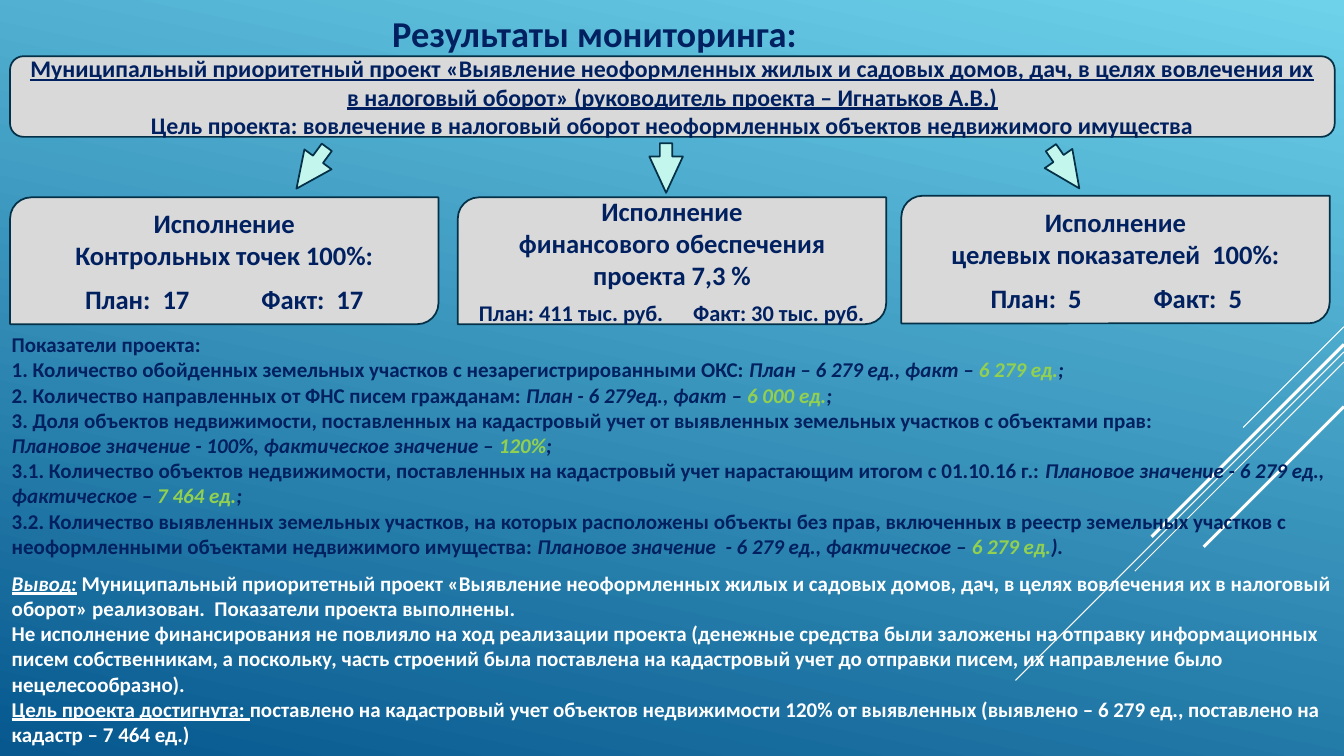
from dataclasses import dataclass

import pptx
import pptx.dml.color
import pptx.enum.shapes
import pptx.enum.text
import pptx.oxml.ns
import pptx.util
from lxml import etree

COLORS = {
    "sky": "6ED2EB", "deep": "06588E", "navy": "002060", "green": "92D050",
    "white": "FFFFFF", "panel": "D9D9D9", "mint": "C3F7ED", "outline": "043148",
}
COLS, ROWS = 160, 90
FONT = "Calibri"
SHAPES = pptx.enum.shapes.MSO_SHAPE
LEFT, CENTER = pptx.enum.text.PP_ALIGN.LEFT, pptx.enum.text.PP_ALIGN.CENTER
MIDDLE = pptx.enum.text.MSO_ANCHOR.MIDDLE

prs = pptx.Presentation()
prs.slide_width, prs.slide_height = pptx.util.Inches(13.3333), pptx.util.Inches(7.5)


@dataclass(frozen=True)
class Run:
    text: str
    color: str = "navy"
    italic: bool = False
    underline: bool = False


@dataclass(frozen=True)
class Para:
    runs: tuple[Run, ...]
    size: float
    align: int = LEFT
    before: float = 0
    tabs: tuple[float, ...] = ()


@dataclass(frozen=True)
class Box:
    """Place on the grid, in columns and rows."""
    left: float
    top: float
    width: float
    height: float


@dataclass(frozen=True)
class Card:
    box: Box
    heading: tuple[str, ...]
    plan: str
    fact: str
    size: float
    before: float
    tabs: tuple[float, float]


@dataclass(frozen=True)
class Arrow:
    center: float
    length: float
    rotation: float


@dataclass(frozen=True)
class Ray:
    """Diagonal from the right edge, running equally far left and down."""
    row: float
    run: float
    weight: float


def col(n: float) -> int:
    return round(prs.slide_width * n / COLS)


def row(n: float) -> int:
    return round(prs.slide_height * n / ROWS)


def place(box: Box) -> tuple[int, int, int, int]:
    return col(box.left), row(box.top), col(box.width), row(box.height)


def rgb(name: str) -> pptx.dml.color.RGBColor:
    return pptx.dml.color.RGBColor.from_string(COLORS[name])


def add_text(p, text: str, *, size: float, color: str = "navy",
             italic: bool = False, underline: bool = False) -> None:
    r = p.add_run()
    r.text = text
    f = r.font
    f.name, f.size, f.bold = FONT, pptx.util.Pt(size), True
    f.italic, f.underline = italic, underline
    f.color.rgb = rgb(color)


def set_tabs(p, stops: tuple[float, ...]) -> None:
    tab_list = etree.SubElement(p._p.get_or_add_pPr(), pptx.oxml.ns.qn("a:tabLst"))
    for stop in stops:
        etree.SubElement(tab_list, pptx.oxml.ns.qn("a:tab"), pos=str(col(stop)), algn="l")


def fill_text(tf, paras: list[Para]) -> None:
    tf.word_wrap = True
    for i, para in enumerate(paras):
        p = tf.paragraphs[0] if i == 0 else tf.add_paragraph()
        p.alignment = para.align
        p.space_before, p.space_after = pptx.util.Pt(para.before), pptx.util.Pt(0)
        if para.tabs:
            set_tabs(p, para.tabs)
        for r in para.runs:
            add_text(p, r.text, size=para.size, color=r.color,
                     italic=r.italic, underline=r.underline)


def add_panel(s, kind: int, box: Box, fill: str, paras: list[Para] = ()):
    sp = s.shapes.add_shape(kind, *place(box))
    sp.shadow.inherit = False
    sp.fill.solid()
    sp.fill.fore_color.rgb = rgb(fill)
    sp.line.color.rgb = rgb("outline")
    sp.line.width = pptx.util.Pt(1.25)
    if paras:
        sp.text_frame.vertical_anchor = MIDDLE
        fill_text(sp.text_frame, paras)
    return sp


def add_card(s, card: Card) -> None:
    paras = [Para((Run(line),), 19, CENTER) for line in card.heading]
    values = Run(f"\tПлан: {card.plan}\tФакт: {card.fact}")
    paras.append(Para((values,), card.size, LEFT, card.before, card.tabs))
    add_panel(s, SHAPES.ROUND_2_DIAG_RECTANGLE, card.box, "panel", paras)


def add_arrow(s, arrow: Arrow) -> None:
    box = Box(arrow.center - 2, 20 - arrow.length / 2, 4, arrow.length)
    sp = add_panel(s, SHAPES.DOWN_ARROW, box, "mint")
    sp.adjustments[0], sp.adjustments[1] = 0.37, 1.08
    sp.rotation = arrow.rotation


def add_ray(s, ray: Ray) -> None:
    line = s.shapes.add_connector(
        pptx.enum.shapes.MSO_CONNECTOR.STRAIGHT,
        col(COLS), row(ray.row), col(COLS - ray.run), row(ray.row + ray.run))
    line.line.color.rgb = rgb("white")
    line.line.width = pptx.util.Pt(ray.weight)
    etree.SubElement(line._element.spPr, pptx.oxml.ns.qn("a:effectLst"))


def indicator(label: str, plan: str, fact: str, end: str = ";") -> Para:
    runs = (Run(label), Run(plan, italic=True), Run(fact, "green", True), Run(end, italic=True))
    return Para(tuple(r for r in runs if r.text), 15)


def conclusion(lead: str, text: str, before: float = 0, italic: bool = False) -> Para:
    runs = (Run(lead, "white", italic, True), Run(text, "white"))
    return Para(tuple(r for r in runs if r.text), 15, before=before)


RAYS = [Ray(38.9, 12, 0.75), Ray(41.9, 39.1, 0.75), Ray(43.1, 24.9, 0.75),
        Ray(41, 22.9, 2.25), Ray(48.4, 16.7, 2.25)]
ARROWS = [Arrow(37.1, 6.1, 36.3), Arrow(79.3, 5.9, 0), Arrow(126.8, 5.9, 325.1)]
CARDS = [
    Card(Box(1.2, 23.5, 51, 15.1), ("Исполнение", "Контрольных точек 100%:"),
         " 17", " 17", 19, 8.5, (7, 28)),
    Card(Box(54.5, 23.5, 51, 15.1), ("Исполнение", "финансового обеспечения проекта 7,3 %"),
         "411 тыс. руб.", "30 тыс. руб.", 16, 6, (0.6, 26.1)),
    Card(Box(107.3, 23.3, 51, 15.2), ("Исполнение", "целевых показателей  100%:"),
         " 5", " 5", 19, 8.5, (8.7, 28.1)),
]
BANNER = [
    Para((Run("Муниципальный приоритетный проект «Выявление неоформленных жилых и садовых домов, дач, в целях вовлечения их в налоговый оборот» (руководитель проекта – Игнатьков А.В.)", underline=True),), 17, CENTER),
    Para((Run("Цель проекта: вовлечение в налоговый оборот неоформленных объектов недвижимого имущества"),), 17, CENTER),
]
REPORT = [
    Para((Run("Показатели проекта:"),), 15),
    indicator("1. Количество обойденных земельных участков с незарегистрированными ОКС: ", "План – 6 279 ед., факт – ", "6 279 ед."),
    indicator("2. Количество направленных от ФНС писем гражданам: ", "План - 6 279ед., факт – ", "6 000 ед."),
    Para((Run("3. Доля объектов недвижимости, поставленных на кадастровый учет от выявленных земельных участков с объектами прав:"),), 15),
    indicator("", "Плановое значение - 100%, фактическое значение – ", "120%"),
    Para((Run("3.1. Количество объектов недвижимости, поставленных на кадастровый учет нарастающим итогом с 01.10.16 г.: "),
          Run("Плановое значение - 6 279 ед.,", italic=True)), 15),
    indicator("", "фактическое – ", "7 464 ед."),
    indicator("3.2. Количество выявленных земельных участков, на которых расположены объекты без прав, включенных в реестр земельных участков с неоформленными объектами недвижимого имущества: ", "Плановое значение  - 6 279 ед., фактическое – ", "6 279 ед.", ")."),
    conclusion("Вывод:", " Муниципальный приоритетный проект «Выявление неоформленных жилых и садовых домов, дач, в целях вовлечения их в налоговый оборот» реализован.  Показатели проекта выполнены.", 8.5, True),
    conclusion("", "Не исполнение финансирования не повлияло на ход реализации проекта (денежные средства были заложены на отправку информационных писем собственникам, а поскольку, часть строений была поставлена на кадастровый учет до отправки писем, их направление было нецелесообразно)."),
    conclusion("Цель проекта достигнута: ", "поставлено на кадастровый учет объектов недвижимости 120% от выявленных (выявлено – 6 279 ед., поставлено на кадастр – 7 464 ед.)"),
]


def main() -> None:
    s = prs.slides.add_slide(prs.slide_layouts[5])
    bg = s.background.fill
    bg.gradient()
    bg.gradient_angle = 258
    for stop, name in zip(bg.gradient_stops, ("sky", "deep")):
        stop.color.rgb = rgb(name)

    for ray in RAYS:
        add_ray(s, ray)

    title = s.shapes.title
    title.left, title.top, title.width, title.height = place(Box(14.8, 1.5, 112, 4.8))
    title.text_frame.auto_size = pptx.enum.text.MSO_AUTO_SIZE.NONE
    title.text_frame.vertical_anchor = MIDDLE
    fill_text(title.text_frame, [Para((Run("Результаты мониторинга:"),), 26, CENTER)])

    report = s.shapes.add_textbox(*place(Box(0, 38.9, COLS, 51.1)))
    report.text_frame.margin_left = col(1.4)
    fill_text(report.text_frame, REPORT)

    add_panel(s, SHAPES.ROUNDED_RECTANGLE, Box(1.2, 6.7, 157.7, 9.6), "panel", BANNER)
    for card in CARDS:
        add_card(s, card)
    for arrow in ARROWS:
        add_arrow(s, arrow)
    prs.save("out.pptx")


if __name__ == "__main__":
    main()
